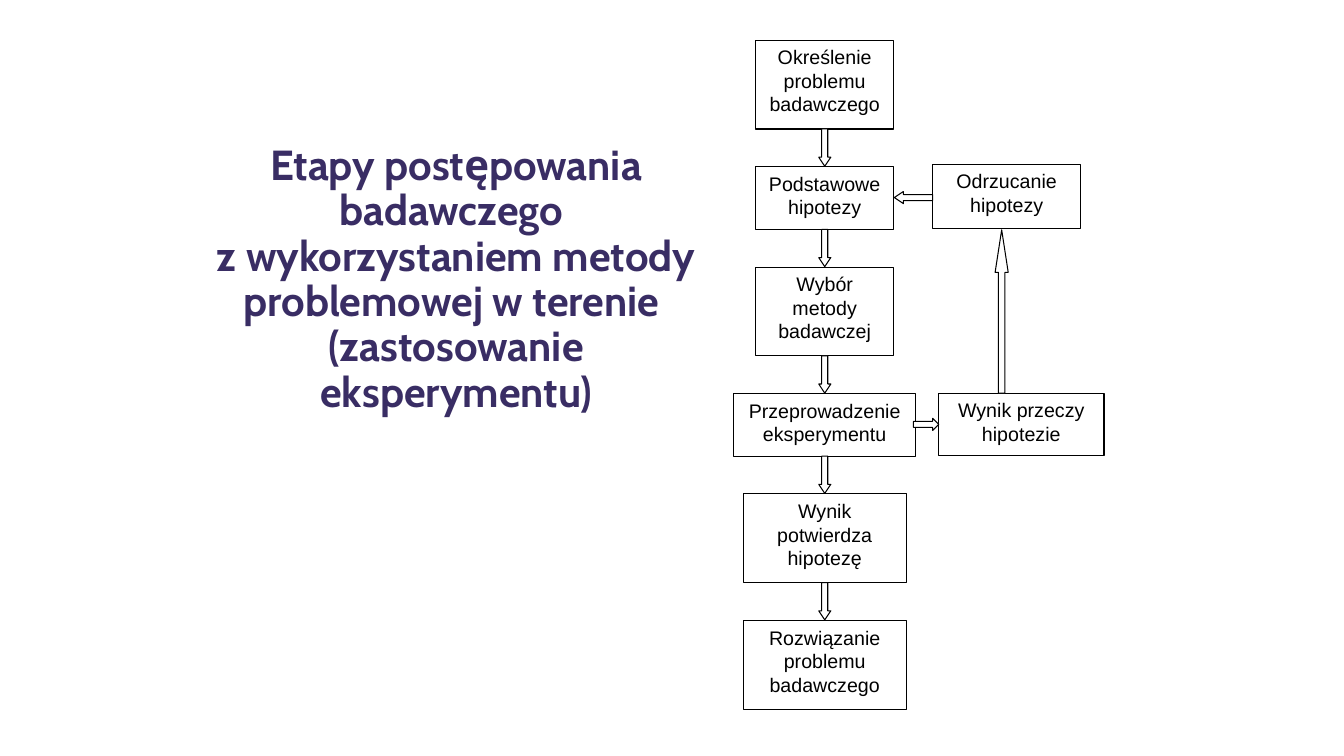
from pptx import Presentation
from pptx.dml.color import RGBColor
from pptx.enum.shapes import MSO_SHAPE
from pptx.enum.text import MSO_ANCHOR, MSO_AUTO_SIZE, PP_ALIGN
from pptx.util import Inches, Pt

PURPLE = RGBColor(0x39, 0x2D, 0x64)
BLACK = RGBColor(0, 0, 0)
WHITE = RGBColor(0xFF, 0xFF, 0xFF)

TITLE_LINES = [
    "Etapy postępowania badawczego ",
    "z wykorzystaniem metody problemowej w terenie ",
    "(zastosowanie eksperymentu)",
]

# Main column: text, width, height
STAGES = [
    ("Określenie problemu badawczego", 1.37, 0.88),
    ("Podstawowe hipotezy", 1.37, 0.62),
    ("Wybór metody badawczej", 1.37, 0.88),
    ("Przeprowadzenie eksperymentu", 1.8, 0.62),
    ("Wynik potwierdza hipotezę", 1.62, 0.88),
    ("Rozwiązanie problemu badawczego", 1.62, 0.88),
]
COLUMN_CENTER = 8.18
COLUMN_TOP = 0.4
STAGE_GAP = 0.37
ARROW_WIDTH = 0.12


def style_run(span, font_name, size, color, bold=False):
    span.font.name = font_name
    span.font.size = Pt(size)
    span.font.bold = bold
    span.font.color.rgb = color


def add_title(page):
    title = page.shapes.title
    title.left, title.top = Inches(1.81), Inches(1.9)
    title.width, title.height = Inches(5.43), Inches(1.76)
    frame = title.text_frame
    frame.auto_size = MSO_AUTO_SIZE.NONE
    frame.word_wrap = True
    frame.vertical_anchor = MSO_ANCHOR.MIDDLE
    para = frame.paragraphs[0]
    para.alignment = PP_ALIGN.CENTER
    para.line_spacing = 0.9
    for index, line in enumerate(TITLE_LINES):
        if index:
            para.add_line_break()
        span = para.add_run()
        span.text = line
        style_run(span, "Cabin", 30, PURPLE, bold=True)


def add_outlined(diagram, kind, left, top, width, height):
    shape = diagram.shapes.add_shape(
        kind, Inches(left), Inches(top), Inches(width), Inches(height))
    shape.shadow.inherit = False
    shape.fill.solid()
    shape.fill.fore_color.rgb = WHITE
    shape.line.color.rgb = BLACK
    shape.line.width = Pt(0.75)
    return shape


def add_stage(diagram, text, left, top, width, height):
    box = add_outlined(diagram, MSO_SHAPE.FLOWCHART_PROCESS,
                       left, top, width, height)
    frame = box.text_frame
    frame.word_wrap = True
    frame.vertical_anchor = MSO_ANCHOR.TOP
    para = frame.paragraphs[0]
    para.alignment = PP_ALIGN.CENTER
    span = para.add_run()
    span.text = text
    style_run(span, "Arial", 14, BLACK)


def add_arrow(diagram, kind, left, top, width, height, head=0.75):
    arrow = add_outlined(diagram, kind, left, top, width, height)
    arrow.adjustments[0] = 0.5
    arrow.adjustments[1] = head


def add_main_column(diagram):
    top = COLUMN_TOP
    for index, (text, width, height) in enumerate(STAGES):
        add_stage(diagram, text, COLUMN_CENTER - width / 2, top, width, height)
        top += height
        if index < len(STAGES) - 1:
            add_arrow(diagram, MSO_SHAPE.DOWN_ARROW,
                      COLUMN_CENTER - ARROW_WIDTH / 2, top,
                      ARROW_WIDTH, STAGE_GAP)
        top += STAGE_GAP + 0.005


def add_rejection_loop(diagram):
    add_stage(diagram, "Odrzucanie hipotezy", 9.25, 1.63, 1.47, 0.64)
    add_stage(diagram, "Wynik przeczy hipotezie", 9.31, 3.9, 1.64, 0.62)
    add_arrow(diagram, MSO_SHAPE.RIGHT_ARROW, 9.06, 4.15, 0.25, ARROW_WIDTH, 0.5)
    add_arrow(diagram, MSO_SHAPE.UP_ARROW, 9.87, 2.28, 0.13, 1.62, 3.25)
    add_arrow(diagram, MSO_SHAPE.LEFT_ARROW, 8.87, 1.9, 0.38, ARROW_WIDTH)


def main():
    deck = Presentation()
    deck.slide_width, deck.slide_height = Inches(13.33), Inches(7.5)
    page = deck.slides.add_slide(deck.slide_layouts[5])
    add_title(page)

    # Flow chart
    diagram = page.shapes.add_group_shape()
    add_main_column(diagram)
    add_rejection_loop(diagram)

    deck.save("out.pptx")


if __name__ == "__main__":
    main()
